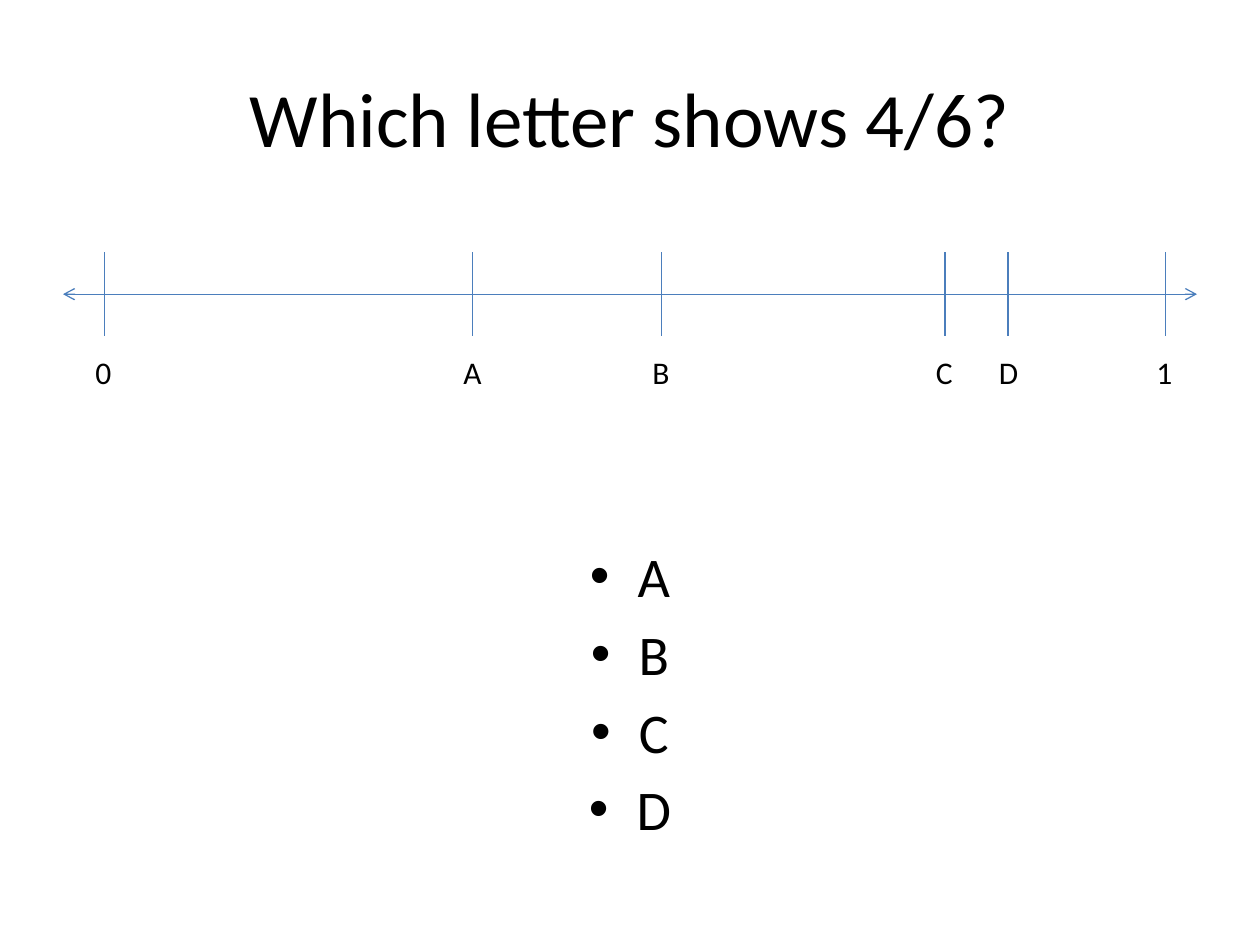
from dataclasses import dataclass

from lxml import etree
from pptx import Presentation
from pptx import util as u
from pptx.dml.color import RGBColor
from pptx.enum import shapes, text
from pptx.oxml.ns import qn


@dataclass(frozen=True)
class Theme:
    """Colours, font and type sizes of the slide."""
    font: str = "Calibri"
    ink: RGBColor = RGBColor(0, 0, 0)
    axis: RGBColor = RGBColor(0x4B, 0x7E, 0xBC)
    title: int = 44
    answer: int = 32
    label: int = 18
    stroke: float = 0.75


THEME = Theme()
TICKS = {"0": 0.83, "A": 3.75, "B": 5.25, "C": 7.5, "D": 8, "1": 9.25}


def apply_format(target, values):
    """Set each attribute named in a dict of format values."""
    for name, value in values.items():
        setattr(target, name, value)


def format_text(paragraph, size, alignment):
    """Give a paragraph its alignment and theme font."""
    paragraph.alignment = alignment
    apply_format(paragraph.font, {"name": THEME.font, "size": u.Pt(size)})
    paragraph.font.color.rgb = THEME.ink


def place(shape, box):
    """Move a shape to a box given in inches."""
    names = ("left", "top", "width", "height")
    apply_format(shape, dict(zip(names, map(u.Inches, box))))


def add_title(slide, box, wording):
    """Fill and place the title placeholder."""
    title = slide.shapes.title
    place(title, box)
    title.text_frame.text = wording
    title.text_frame.vertical_anchor = text.MSO_ANCHOR.MIDDLE
    format_text(title.text_frame.paragraphs[0], THEME.title, text.PP_ALIGN.CENTER)


def add_line(slide, start, end, arrows=False):
    """Draw a thin line, with open arrowheads at both ends if asked."""
    ends = map(u.Inches, (*start, *end))
    line = slide.shapes.add_connector(shapes.MSO_CONNECTOR.STRAIGHT, *ends)
    line.line.color.rgb = THEME.axis
    line.line.width = u.Pt(THEME.stroke)
    properties = line._element.spPr
    if arrows:
        outline = properties.find(qn("a:ln"))
        for tag in ("a:headEnd", "a:tailEnd"):
            etree.SubElement(outline, qn(tag), type="arrow")
    etree.SubElement(properties, qn("a:effectLst"))


def add_text_box(slide, box):
    """Add a wrapping text box and return its text frame."""
    frame = slide.shapes.add_textbox(*map(u.Inches, box)).text_frame
    frame.word_wrap = True
    return frame


def add_number_line(slide, box, ticks):
    """Draw a two-way axis with a labelled tick at each position."""
    left, top, width, height = box
    middle = top + height / 2
    add_line(slide, (left, middle), (left + width, middle), arrows=True)
    for label, x in ticks.items():
        add_line(slide, (x, top), (x, top + height))
        label_width = 0.33 if label.isdigit() else 0.58
        frame = add_text_box(slide, (x - 0.17, 2.75, label_width, 0.4))
        frame.auto_size = text.MSO_AUTO_SIZE.SHAPE_TO_FIT_TEXT
        frame.text = label
        format_text(frame.paragraphs[0], THEME.label, text.PP_ALIGN.LEFT)


def add_answers(slide, box, answers):
    """List the answers as centred bullets."""
    frame = add_text_box(slide, box)
    frame.text = "\n".join(answers)
    for index, paragraph in enumerate(frame.paragraphs):
        properties = paragraph._p.get_or_add_pPr()
        properties.set("marL", str(u.Inches(0.38)))
        properties.set("indent", str(u.Inches(-0.38)))
        etree.SubElement(properties, qn("a:buFont"), typeface="Arial")
        etree.SubElement(properties, qn("a:buChar"), char="•")
        format_text(paragraph, THEME.answer, text.PP_ALIGN.CENTER)
        paragraph.space_before = u.Pt(6 if index else 0)


def main():
    """Build and save the slide."""
    presentation = Presentation()
    apply_format(presentation, {"slide_width": u.Inches(10), "slide_height": u.Inches(7.5)})
    slide = presentation.slides.add_slide(presentation.slide_layouts[5])
    add_title(slide, (0.5, 0.3, 9, 1.25), "Which letter shows 4/6?")
    add_number_line(slide, (0.5, 2, 9, 0.67), TICKS)
    add_answers(slide, (3.75, 4.25, 2.5, 3.03), "ABCD")
    presentation.save("out.pptx")


if __name__ == "__main__":
    main()
